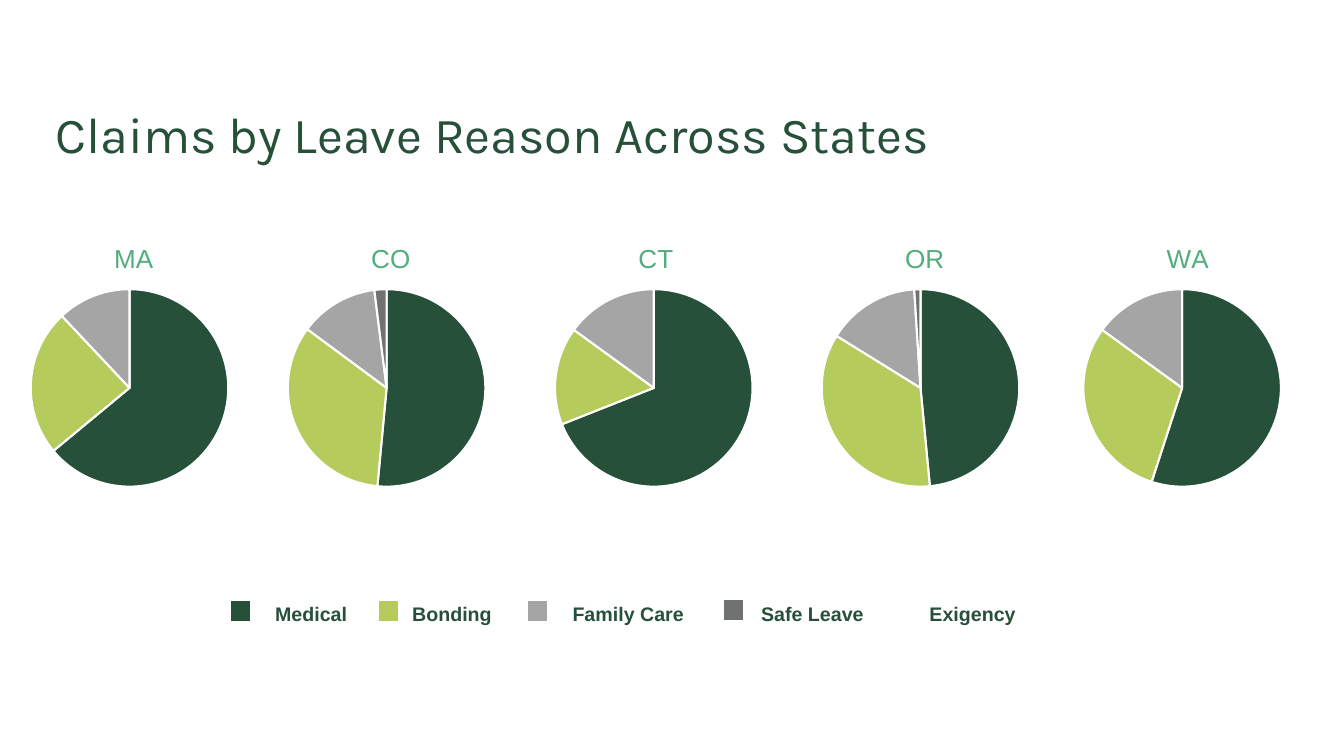
from dataclasses import dataclass

from lxml import etree
from pptx import Presentation
from pptx.chart.data import CategoryChartData
from pptx.dml.color import RGBColor
from pptx.enum.chart import XL_CHART_TYPE
from pptx.enum.shapes import MSO_CONNECTOR
from pptx.enum.text import MSO_ANCHOR
from pptx.oxml import parse_xml
from pptx.oxml.ns import nsdecls, qn
from pptx.util import Inches, Pt

PIE = XL_CHART_TYPE.PIE
LINE = MSO_CONNECTOR.STRAIGHT
MIDDLE = MSO_ANCHOR.MIDDLE


@dataclass(frozen=True)
class Theme:
    """Colours, fonts and type sizes of the slide."""
    dark: str = "26503A"
    mint: str = "52AD7D"
    white: str = "FFFFFF"
    hues: tuple = ("26503A", "B5CB5C", "A5A5A5", "707171", "FFFFFF")
    head: str = "Karla"
    body: str = "Arial"
    big: float = 36
    mid: float = 18.6
    key: float = 14
    small: float = 10


THEME = Theme()
TITLE = "Claims by Leave Reason Across States"
ROW_TOP, ROW_HIGH = 2.16, 2.81
DISC, DISC_TOP = 1.96, 0.71
STATES = [
    ("MA", -0.49, 3.55, (64, 24, 12, 0)),
    ("CO", 2.38, 2.91, (52, 34, 13, 2, 0)),
    ("CT", 5.03, 2.91, (69, 16, 15, 0, 0)),
    ("OR", 7.59, 3.08, (48, 35, 15, 1)),
    ("WA", 10.32, 2.81, (55, 30, 15, 0)),
]
REASONS = ["Medical", "Bonding", "Family Care", "Safe Leave", "Exigency"]
TABS = [1.36, 2.95, 4.82, 6.49]
MARKS = [(2.29, 6.06), (3.76, 6.06), (5.24, 6.06), (7.18, 6.05)]


def style(font, face, size, color, bold=False):
    """Set face, size, colour and weight of a font."""
    font.name, font.size, font.bold = face, Pt(size), bold
    font.color.rgb = RGBColor.from_string(color)


def add_text(slide, box, text):
    """Add a wrapped text box and return its frame."""
    frame = slide.shapes.add_textbox(*map(Inches, box)).text_frame
    frame.word_wrap = True
    frame.text = text
    return frame


def add_title(slide, box):
    """Place the slide title in its box."""
    frame = add_text(slide, box, TITLE)
    frame.vertical_anchor = MIDDLE
    line = frame.paragraphs[0]
    line.line_spacing = 0.9
    style(line.runs[0].font, THEME.head, THEME.big, THEME.dark)


def layout(**shares):
    """Build a manual chart layout from shares of the frame."""
    node = parse_xml(f"<c:layout {nsdecls('c')}><c:manualLayout/></c:layout>")
    inner = node[0]
    if "w" in shares:
        etree.SubElement(inner, qn("c:layoutTarget")).set("val", "inner")
    for mode in ("xMode", "yMode"):
        etree.SubElement(inner, qn(f"c:{mode}")).set("val", "edge")
    for name, share in shares.items():
        etree.SubElement(inner, qn(f"c:{name}")).set("val", f"{share:.4f}")
    return node


def add_pie(slide, box, state, values):
    """Place the pie of one state, centred in its box."""
    wide, high = box[2:]
    data = CategoryChartData()
    data.categories = [str(i + 1) for i in range(len(values))]
    data.add_series(state, values)
    chart = slide.shapes.add_chart(PIE, *map(Inches, box), data).chart
    style(chart.font, THEME.body, THEME.small, THEME.dark)
    chart.has_legend = False
    chart.has_title = True
    title = chart.chart_title
    title.include_in_layout = False
    title.text_frame.text = state
    run = title.text_frame.paragraphs[0].runs[0]
    style(run.font, THEME.body, THEME.mid, THEME.mint)

    plot = chart.plots[0]
    plot.vary_by_categories = True
    for i, color in enumerate(THEME.hues[:len(values)]):
        slice_look = plot.series[0].points[i].format
        slice_look.fill.solid()
        slice_look.fill.fore_color.rgb = RGBColor.from_string(color)
        slice_look.line.color.rgb = RGBColor.from_string(THEME.white)
        slice_look.line.width = Pt(1.5)

    root = chart.element
    head, area = (next(root.iter(qn(tag))) for tag in ("c:title", "c:plotArea"))
    spots = [
        (head, 1, layout(x=0.5 - 0.2 / wide, y=0.19 / high)),
        (area, 0, layout(x=0.5 - DISC / 2 / wide, y=DISC_TOP / high,
                         w=DISC / wide, h=DISC / high)),
    ]
    for owner, index, node in spots:
        for old in owner.findall(qn("c:layout")):
            owner.remove(old)
        owner.insert(index, node)


def add_key(slide, box):
    """Place the reasons on tab stops, with a colour mark for each."""
    line = add_text(slide, box, "\t".join(REASONS)).paragraphs[0]
    props = line._p.get_or_add_pPr()
    stops = etree.SubElement(props, qn("a:tabLst"))
    for tab in TABS:
        stop = etree.SubElement(stops, qn("a:tab"))
        stop.set("pos", str(Inches(tab)))
        stop.set("algn", "l")
    for run in line.runs:
        style(run.font, THEME.body, THEME.key, THEME.dark, True)
    for (left, top), color in zip(MARKS, THEME.hues):
        ends = map(Inches, (left, top, left + 0.19, top))
        mark = slide.shapes.add_connector(LINE, *ends)
        mark.line.color.rgb = RGBColor.from_string(color)
        mark.line.width = Pt(14)
        etree.SubElement(mark._element.spPr, qn("a:effectLst"))


def main():
    """Build the slide and save it."""
    deck = Presentation()
    deck.slide_width, deck.slide_height = Inches(13.33), Inches(7.5)
    slide = deck.slides.add_slide(deck.slide_layouts[6])
    add_title(slide, (0.45, 0.8, 11.5, 1.12))
    for state, left, wide, values in STATES:
        add_pie(slide, (left, ROW_TOP, wide, ROW_HIGH), state, values)
    add_key(slide, (2.63, 5.92, 9.49, 0.49))
    deck.save("out.pptx")


if __name__ == "__main__":
    main()
